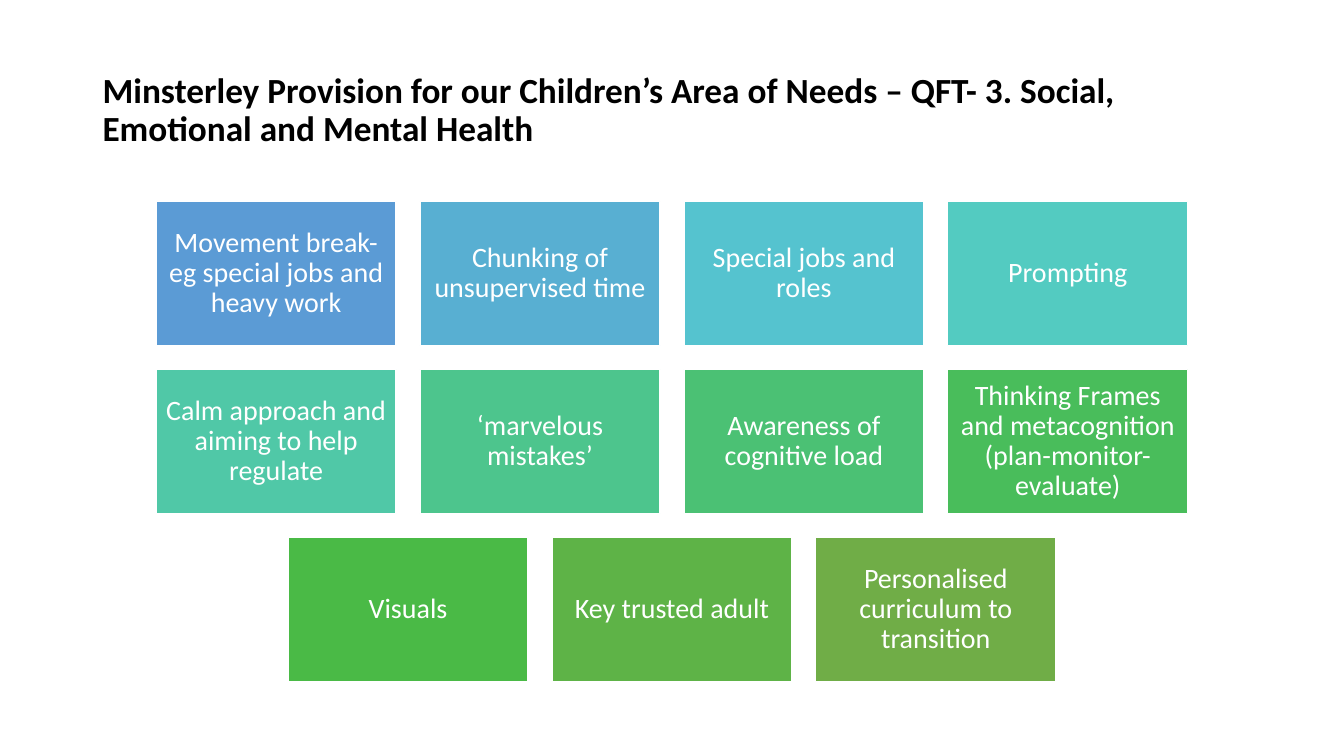
import dataclasses

import pptx
import pptx.dml.color
import pptx.enum.shapes
import pptx.enum.text
import pptx.util

Cm = pptx.util.Cm
Pt = pptx.util.Pt

COLORS = {
    "text": "000000",
    "white": "FFFFFF",
    "blue": "5B9BD5",
    "sky": "58AFD2",
    "cyan": "55C3CF",
    "turquoise": "53CBC1",
    "aqua": "50C8A7",
    "mint": "4DC58D",
    "jade": "4BC174",
    "emerald": "49BD5B",
    "green": "4ABA46",
    "leaf": "5EB347",
    "olive": "70AD47",
}

FONT = "Calibri"
SLIDE_W, SLIDE_H = 33.87, 19.05
TILE_W, TILE_H, GAP = 6.05, 3.63, 0.6
GRID_TOP = 5.08


@dataclasses.dataclass
class Tile:
    text: str
    color: str


ROWS = [
    [
        Tile("Movement break- eg special jobs and heavy work", "blue"),
        Tile("Chunking of unsupervised time", "sky"),
        Tile("Special jobs and roles", "cyan"),
        Tile("Prompting", "turquoise"),
    ],
    [
        Tile("Calm approach and aiming to help regulate", "aqua"),
        Tile("‘marvelous mistakes’", "mint"),
        Tile("Awareness of cognitive load", "jade"),
        Tile("Thinking Frames and metacognition (plan-monitor-evaluate)", "emerald"),
    ],
    [
        Tile("Visuals", "green"),
        Tile("Key trusted adult", "leaf"),
        Tile("Personalised curriculum to transition", "olive"),
    ],
]


def rgb(name: str) -> pptx.dml.color.RGBColor:
    return pptx.dml.color.RGBColor.from_string(COLORS[name])


def format_text(tf, size: float, color: str, align, bold: bool = False) -> None:
    tf.word_wrap = True
    tf.auto_size = pptx.enum.text.MSO_AUTO_SIZE.NONE
    tf.vertical_anchor = pptx.enum.text.MSO_ANCHOR.MIDDLE
    for p in tf.paragraphs:
        p.alignment = align
        p.line_spacing = 0.9
        for r in p.runs:
            r.font.name = FONT
            r.font.size = Pt(size)
            r.font.bold = bold
            r.font.color.rgb = rgb(color)


def add_title(s, text: str) -> None:
    sp = s.shapes.title
    sp.left, sp.top, sp.width, sp.height = Cm(2.33), Cm(1.55), Cm(29.21), Cm(3.15)
    tf = sp.text_frame
    tf.text = text
    tf.margin_bottom = Cm(0.79)
    format_text(tf, 25.2, "text", pptx.enum.text.PP_ALIGN.LEFT, bold=True)


def add_tile(s, tile: Tile, left: float, top: float) -> None:
    sp = s.shapes.add_shape(
        pptx.enum.shapes.MSO_SHAPE.RECTANGLE,
        Cm(left), Cm(top), Cm(TILE_W), Cm(TILE_H),
    )
    sp.shadow.inherit = False
    sp.fill.solid()
    sp.fill.fore_color.rgb = rgb(tile.color)
    sp.line.color.rgb = rgb("white")
    sp.line.width = Pt(1)
    tf = sp.text_frame
    tf.text = tile.text
    tf.margin_left = tf.margin_right = tf.margin_top = tf.margin_bottom = Cm(0.2)
    format_text(tf, 20, "white", pptx.enum.text.PP_ALIGN.CENTER)


def main() -> None:
    prs = pptx.Presentation()
    prs.slide_width, prs.slide_height = Cm(SLIDE_W), Cm(SLIDE_H)
    s = prs.slides.add_slide(prs.slide_layouts.get_by_name("Title Only"))
    add_title(
        s,
        "Minsterley Provision for our Children’s Area of Needs – QFT- 3. "
        "Social, Emotional and Mental Health",
    )
    for i, row in enumerate(ROWS):
        row_w = len(row) * (TILE_W + GAP) - GAP
        left = (SLIDE_W - row_w) / 2
        top = GRID_TOP + i * (TILE_H + GAP)
        for j, tile in enumerate(row):
            add_tile(s, tile, left + j * (TILE_W + GAP), top)
    prs.save("out.pptx")


if __name__ == "__main__":
    main()
